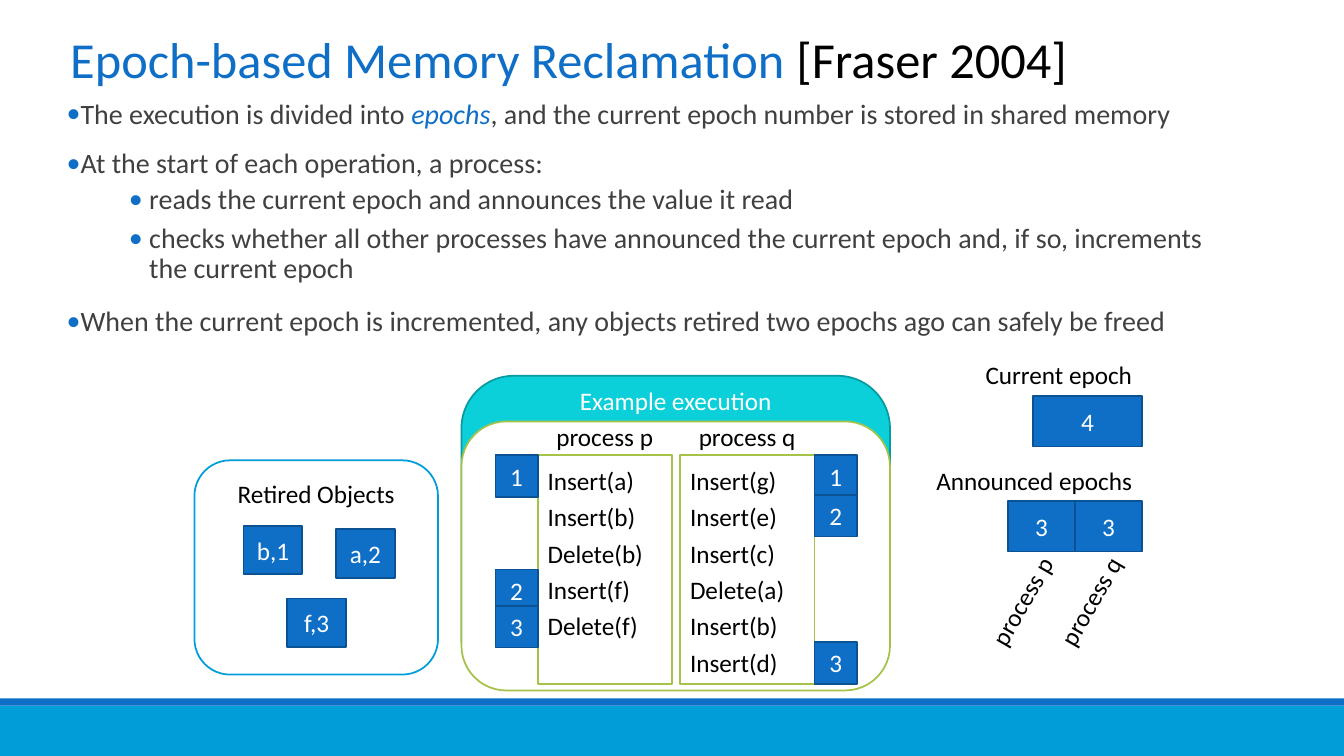
from lxml import etree
from pptx import Presentation
from pptx import util as u
from pptx.dml import color as c
from pptx.enum import shapes, text
from pptx.oxml import ns

ALIGN = text.PP_ALIGN
ANCHOR = text.MSO_ANCHOR
ROUNDED = shapes.MSO_SHAPE.ROUNDED_RECTANGLE
PROCESS = shapes.MSO_SHAPE.FLOWCHART_PROCESS
RECTANGLE = shapes.MSO_SHAPE.RECTANGLE

theme = {
    "font": "Calibri",
    "sizes": {"title": u.Pt(36), "body": u.Pt(20), "label": u.Pt(18)},
    "colors": {
        name: c.RGBColor.from_string(value)
        for name, value in {
            "blue": "0F6FC6", "navy": "0B5292", "sky": "009DD9",
            "cyan": "0BD0D9", "teal": "089AA1", "green": "A5C249",
            "grey": "404040", "white": "FFFFFF", "black": "000000",
        }.items()
    },
}
colors, sizes = theme["colors"], theme["sizes"]


def add_runs(paragraph, runs, size):
    for words, color, italic in runs:
        run = paragraph.add_run()
        run.text = words
        run.font.color.rgb = colors[color]
        for name, value in {"name": theme["font"], "size": sizes[size], "italic": italic}.items():
            setattr(run.font, name, value)


def add_block(kind, at, words="", fill=None, line=None, color="white",
              align=ALIGN.CENTER, anchor=ANCHOR.MIDDLE, **margins):
    place = [u.Cm(value) for value in at]
    if kind is None:
        shape = slide.shapes.add_textbox(*place)
    else:
        shape = slide.shapes.add_shape(kind, *place)
        shape.shadow.inherit = False
        shape.fill.solid()
        shape.fill.fore_color.rgb = colors[fill]
        if line:
            shape.line.color.rgb = colors[line]
            shape.line.width = u.Pt(1.25)
        else:
            shape.line.fill.background()
    if words:
        frame = shape.text_frame
        for name, value in {"word_wrap": True, "vertical_anchor": anchor, **margins}.items():
            setattr(frame, name, value)
        frame.paragraphs[0].alignment = align
        add_runs(frame.paragraphs[0], [(words, color, False)], "label")
    return shape


presentation = Presentation()
presentation.slide_width = u.Cm(33.87)
presentation.slide_height = u.Cm(19.05)
slide = presentation.slides.add_slide(presentation.slide_layouts[1])
title, body = slide.placeholders

chip = {"fill": "blue", "line": "navy"}
label = {"color": "black", "anchor": ANCHOR.TOP}

add_block(RECTANGLE, (0, 17.78, 33.87, 1.27), fill="sky")
add_block(RECTANGLE, (0, 17.6, 33.87, 0.18), fill="blue")

placeholders = [
    (title, (1.52, 0.58, 29.8, 1.8), u.Cm(0.25)),
    (body, (1.68, 2.39, 29.64, 6.48), 0),
]
for placeholder, at, margin in placeholders:
    for name, value in zip(("left", "top", "width", "height"), at):
        setattr(placeholder, name, u.Cm(value))
    frame_format = {
        "margin_left": margin, "margin_right": margin, "word_wrap": True,
        "vertical_anchor": ANCHOR.TOP, "auto_size": text.MSO_AUTO_SIZE.NONE,
    }
    for name, value in frame_format.items():
        setattr(placeholder.text_frame, name, value)

heading = title.text_frame.paragraphs[0]
heading.alignment = ALIGN.LEFT
add_runs(heading, [("Epoch-based Memory Reclamation ", "blue", False),
                   ("[Fraser 2004]", "black", False)], "title")

points = [
    (0, [("The execution is divided into ", "grey", False), ("epochs", "blue", True),
         (", and the current epoch number is stored in shared memory", "grey", False)]),
    (0, [("At the start of each operation, a process:", "grey", False)]),
    (3, [("reads the current epoch and announces the value it read", "grey", False)]),
    (3, [("checks whether all other processes have announced the current epoch and, "
          "if so, increments the current epoch", "grey", False)]),
    (0, [("When the current epoch is incremented, any objects retired two epochs ago "
          "can safely be freed", "grey", False)]),
]
for index, (level, runs) in enumerate(points):
    frame = body.text_frame
    paragraph = frame.add_paragraph() if index else frame.paragraphs[0]
    before, after, left, hanging = (2, 4, 2.08, 0.51) if level else (12, 2, 0.25, 0.25)
    paragraph_format = {
        "level": level, "alignment": ALIGN.LEFT, "line_spacing": 0.9,
        "space_before": u.Pt(before if index else 0), "space_after": u.Pt(after),
    }
    for name, value in paragraph_format.items():
        setattr(paragraph, name, value)
    properties = paragraph._p.get_or_add_pPr()
    properties.set("marL", str(u.Cm(left)))
    properties.set("indent", str(-u.Cm(hanging)))
    bullet_color = etree.SubElement(properties, ns.qn("a:buClr"))
    etree.SubElement(bullet_color, ns.qn("a:srgbClr")).set("val", str(colors["blue"]))
    etree.SubElement(properties, ns.qn("a:buFont")).set("typeface", theme["font"])
    etree.SubElement(properties, ns.qn("a:buChar")).set("char", "•")
    add_runs(paragraph, runs, "body")

add_block(ROUNDED, (11.63, 9.47, 10.8, 7.92), "Example execution", "cyan", "teal",
          margin_top=0, margin_bottom=u.Cm(6.7))
add_block(ROUNDED, (11.63, 10.62, 10.8, 6.78), fill="white", line="green")

processes = [
    ("process p", 13.55, 12.49,
     ["Insert(a)", "Insert(b)", "Delete(b)", "Insert(f)", "Delete(f)"],
     [11.47, 14.35, 15.27]),
    ("process q", 17.14, 20.53,
     ["Insert(g)", "Insert(e)", "Insert(c)", "Delete(a)", "Insert(b)", "Insert(d)"],
     [11.47, 12.47, 16.18]),
]
for index, (process, left, epoch_left, operations, epoch_tops) in enumerate(processes):
    add_block(PROCESS, (left, 11.47, 3.39, 5.77), fill="white", line="green")
    add_block(None, (left - 0.64, 10.5, 4.66, 1.02), process, **label)
    for row, operation in enumerate(operations):
        add_block(None, (left, 11.6 + row * 0.915, 3.39, 1.02), operation,
                  align=ALIGN.LEFT, **label)
    for epoch, top in enumerate(epoch_tops, 1):
        add_block(PROCESS, (epoch_left, top, 1.06, 1.05), str(epoch), **chip)
    add_block(PROCESS, (25.4 + index * 1.69, 12.63, 1.69, 1.27), "3", **chip)
    announced_process = add_block(None, (24 + index * 1.73, 14.8, 3.33, 1.06), process,
                                  align=ALIGN.RIGHT, **label)
    announced_process.rotation = 300

add_block(None, (24.13, 8.94, 4.65, 1.02), "Current epoch", align=ALIGN.RIGHT, **label)
add_block(PROCESS, (26.04, 9.98, 2.74, 1.27), "4", **chip)
add_block(None, (22.23, 11.6, 6.55, 1.02), "Announced epochs", align=ALIGN.RIGHT, **label)

add_block(ROUNDED, (4.9, 11.6, 6.14, 5.4), "Retired Objects", "white", "sky",
          margin_top=u.Cm(0.2), **label)
for retired, left, top in [("b,1", 6.14, 13.25), ("a,2", 8.47, 13.34), ("f,3", 7.24, 15.08)]:
    add_block(PROCESS, (left, top, 1.48, 1.22), retired,
              margin_left=0, margin_right=0, **chip)

presentation.save("out.pptx")
